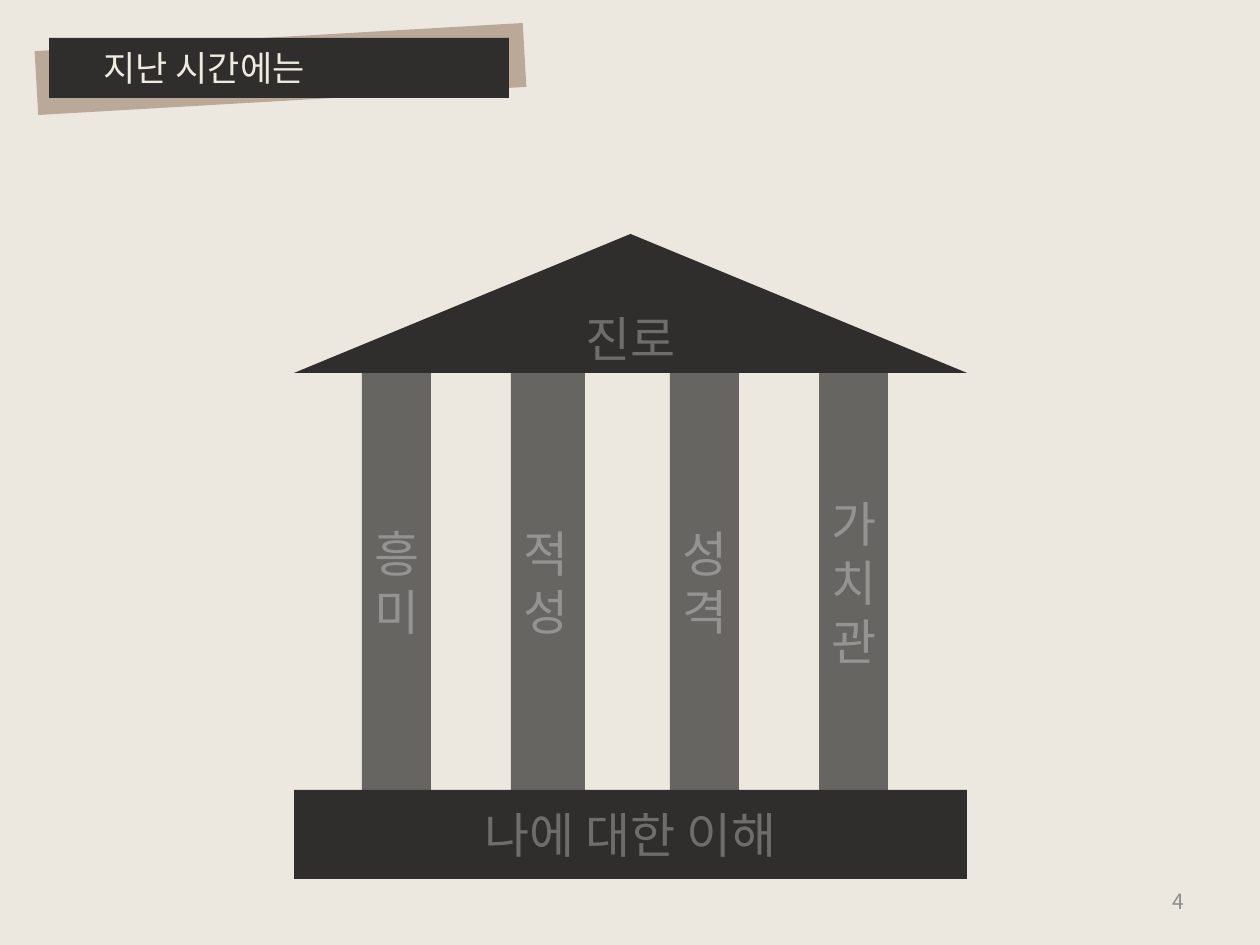
"""Build a slide showing career as a temple resting on four pillars of self-understanding."""
from lxml import etree
from pptx import Presentation
from pptx.dml.color import RGBColor
from pptx.enum.shapes import MSO_SHAPE
from pptx.enum.text import MSO_ANCHOR, PP_ALIGN
from pptx.oxml.ns import qn
from pptx.util import Pt

PX = 914400 // 126
RECTANGLE, TRIANGLE = MSO_SHAPE.RECTANGLE, MSO_SHAPE.ISOSCELES_TRIANGLE
TOP, MIDDLE = MSO_ANCHOR.TOP, MSO_ANCHOR.MIDDLE
LEFT, CENTER, RIGHT = PP_ALIGN.LEFT, PP_ALIGN.CENTER, PP_ALIGN.RIGHT
FONT = "Noto Sans CJK KR"
COLORS = {
    "paper": "ECE8E0",
    "tape": "BAA999",
    "dark": "2F2E2C",
    "pillar": "676562",
    "title": "EEECE1",
    "label": "FFFFFF",
    "number": "8C8C8C",
}


def add_block(kind, box, color):
    block = slide.shapes.add_shape(kind, *(n * PX for n in box))
    block.shadow.inherit = False
    block.fill.solid()
    block.fill.fore_color.rgb = RGBColor.from_string(COLORS[color])
    block.line.fill.background()
    return block


def write(holder, words, size, line_height, color, align, anchor, opacity=100):
    frame = holder.text_frame
    frame.word_wrap = True
    frame.vertical_anchor = anchor
    paragraph = frame.paragraphs[0]
    paragraph.alignment = align
    paragraph.line_spacing = Pt(line_height)
    run = paragraph.add_run()
    run.text = words
    run.font.size = Pt(size)
    run.font.name = FONT
    run.font.color.rgb = RGBColor.from_string(COLORS[color])
    properties = run.font._element
    etree.SubElement(properties, qn("a:ea")).set("typeface", FONT)
    if opacity < 100:
        tint = properties.find(".//" + qn("a:srgbClr"))
        etree.SubElement(tint, qn("a:alpha")).set("val", str(opacity * 1000))


presentation = Presentation()
presentation.slide_width = 1260 * PX
presentation.slide_height = 945 * PX
slide = presentation.slides.add_slide(presentation.slide_layouts[6])
slide.background.fill.solid()
slide.background.fill.fore_color.rgb = RGBColor.from_string(COLORS["paper"])

tape = add_block(RECTANGLE, (36, 37, 489, 64), "tape")
tape.rotation = 356.7
add_block(RECTANGLE, (49, 38, 460, 60), "dark")

title = slide.shapes.add_textbox(*(n * PX for n in (91, 40, 387, 55)))
write(title, "지난 시간에는", 20, 24, "title", LEFT, TOP)
page_number = slide.shapes.add_textbox(*(n * PX for n in (903, 876, 294, 50)))
write(page_number, "4", 12, 15, "number", RIGHT, MIDDLE)

temple = [
    (RECTANGLE, (362, 354, 69, 456), "pillar", "흥미", LEFT),
    (RECTANGLE, (511, 354, 74, 456), "pillar", "적성", LEFT),
    (RECTANGLE, (670, 354, 69, 456), "pillar", "성격", LEFT),
    (RECTANGLE, (819, 354, 69, 456), "pillar", "가치관", LEFT),
    (RECTANGLE, (294, 790, 673, 89), "dark", "나에 대한 이해", CENTER),
    (TRIANGLE, (294, 234, 673, 139), "dark", "진로", CENTER),
]
for kind, box, color, words, align in temple:
    part = add_block(kind, box, color)
    write(part, words, 28, 33.5, "label", align, MIDDLE, opacity=30)

presentation.save("out.pptx")
